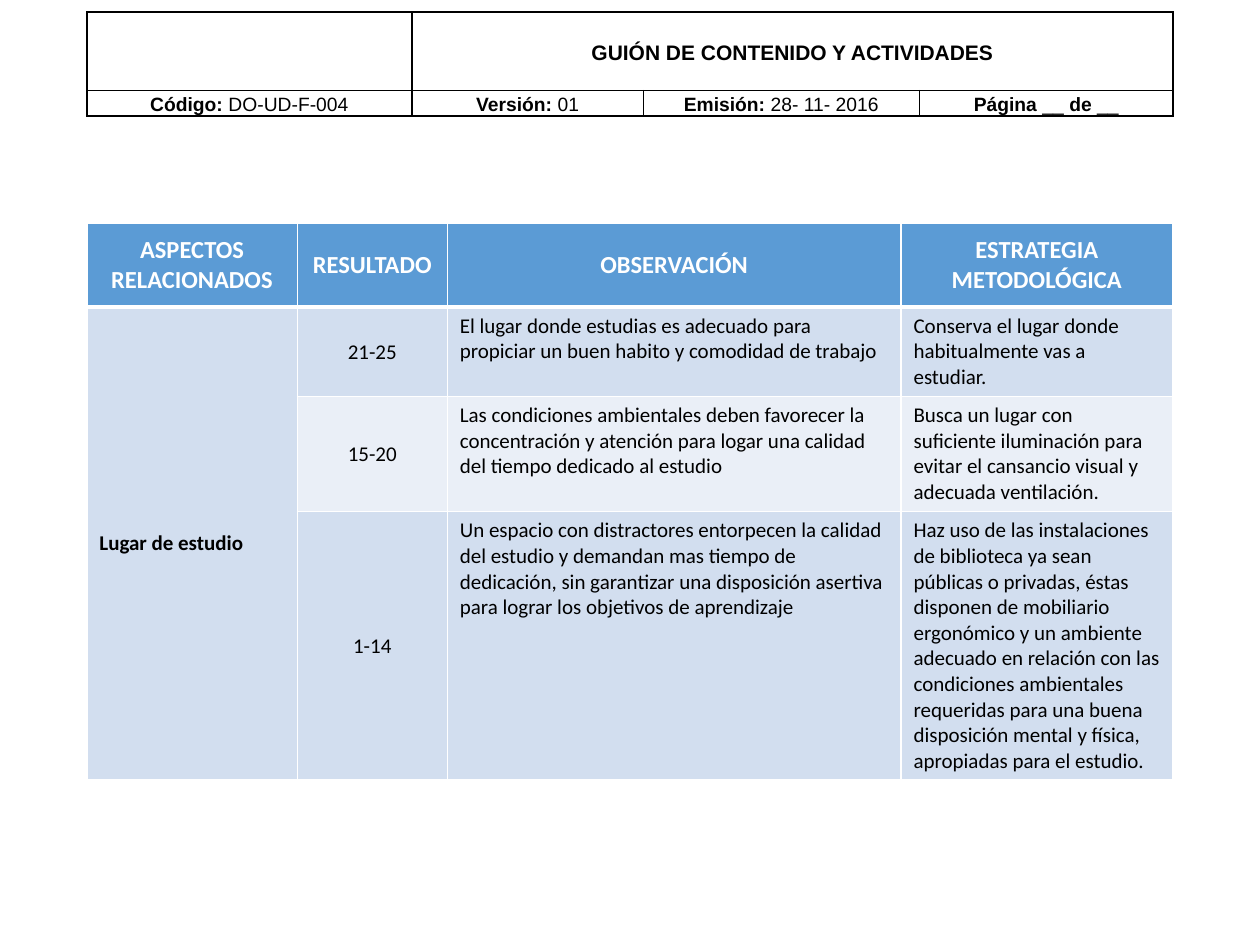
from lxml import etree
from pptx import Presentation
from pptx.dml.color import RGBColor
from pptx.enum.text import MSO_ANCHOR, PP_ALIGN
from pptx.oxml.ns import qn
from pptx.util import Pt

CENTER, LEFT = PP_ALIGN.CENTER, PP_ALIGN.LEFT
MIDDLE, TOP = MSO_ANCHOR.MIDDLE, MSO_ANCHOR.TOP
BLACK, WHITE = "000000", "FFFFFF"
HEADER_FILL, BAND_FILLS = "5B9BD5", ("D2DEEF", "EAEFF7")

TITLE = [("GUIÓN DE CONTENIDO Y ACTIVIDADES", True)]
DOCUMENT_DATA = [
    [("Código: ", True), ("DO-UD-F-004", False)],
    [("Versión:", True), (" 01", False)],
    [("Emisión:", True), (" 28- 11- 2016", False)],
    [("Página ", True), ("__ ", False), ("de ", True), ("__", False)],
]
HEADINGS = ["ASPECTOS RELACIONADOS", "RESULTADO", "OBSERVACIÓN", "ESTRATEGIA METODOLÓGICA"]
ASPECT = "Lugar de estudio"
RESULTS = [
    ("21-25",
     "El lugar donde estudias es adecuado para propiciar un buen habito y comodidad de trabajo",
     "Conserva el lugar donde habitualmente vas a estudiar."),
    ("15-20",
     "Las condiciones ambientales deben favorecer la concentración y atención para logar una "
     "calidad del tiempo dedicado al estudio",
     "Busca un lugar con suficiente iluminación para evitar el cansancio visual y adecuada "
     "ventilación."),
    ("1-14",
     "Un espacio con distractores entorpecen la calidad del estudio y demandan mas tiempo de "
     "dedicación, sin garantizar una disposición asertiva para lograr los objetivos de aprendizaje",
     "Haz uso de las instalaciones de biblioteca ya sean públicas o privadas, éstas disponen de "
     "mobiliario ergonómico y un ambiente adecuado en relación con las condiciones ambientales "
     "requeridas para una buena disposición mental y física, apropiadas para el estudio."),
]

TABLE_LEFT = 49.6
FORM_TOP, FORM_WIDTHS, FORM_HEIGHTS = 6.8, (185.8, 132.2, 157.8, 145), (45, 14.4)
RESULTS_TOP, RESULTS_WIDTHS, RESULTS_HEIGHTS = 127.5, (120.3, 85.7, 259.3, 155.3), (48, 51, 65.5, 153)


def rgb(value):
    return RGBColor.from_string(value)


def add_grid(slide, top, widths, heights):
    table = slide.shapes.add_table(
        len(heights), len(widths), Pt(TABLE_LEFT), Pt(top), Pt(sum(widths)), Pt(sum(heights))).table
    table.first_row = table.horz_banding = False
    for column, width in zip(table.columns, widths):
        column.width = Pt(width)
    for row, height in zip(table.rows, heights):
        row.height = Pt(height)
    return table


def paint(cell, color, fill=None, top=1, bottom=1):
    properties = cell._tc.get_or_add_tcPr()
    for side, weight in (("L", 1), ("R", 1), ("T", top), ("B", bottom)):
        line = etree.SubElement(properties, qn(f"a:ln{side}"), w=str(Pt(weight)))
        solid = etree.SubElement(line, qn("a:solidFill"))
        etree.SubElement(solid, qn("a:srgbClr"), val=color)
    if fill:
        cell.fill.solid()
        cell.fill.fore_color.rgb = rgb(fill)
    else:
        cell.fill.background()


def write(cell, runs, font, size, color=BLACK, align=CENTER, anchor=MIDDLE):
    cell.vertical_anchor = anchor
    paragraph = cell.text_frame.paragraphs[0]
    paragraph.alignment = align
    for text, bold in runs:
        run = paragraph.add_run()
        run.text = text
        run.font.name, run.font.size, run.font.bold = font, Pt(size), bold
        run.font.color.rgb = rgb(color)
    return paragraph


def write_form(cell, runs, size):
    cell.margin_left = cell.margin_right = Pt(3.6)
    cell.margin_top = cell.margin_bottom = 0
    write(cell, runs, "Arial", size).line_spacing = 1.15


def add_form(slide):
    form = add_grid(slide, FORM_TOP, FORM_WIDTHS, FORM_HEIGHTS)
    for cell in form.iter_cells():
        paint(cell, BLACK)
    form.cell(0, 1).merge(form.cell(0, 3))
    write_form(form.cell(0, 1), TITLE, 12)
    for column, runs in enumerate(DOCUMENT_DATA):
        write_form(form.cell(1, column), runs, 11)


def add_results(slide):
    results = add_grid(slide, RESULTS_TOP, RESULTS_WIDTHS, RESULTS_HEIGHTS)
    for column, heading in enumerate(HEADINGS):
        cell = results.cell(0, column)
        paint(cell, WHITE, HEADER_FILL, bottom=3)
        write(cell, [(heading, True)], "Calibri", 14, WHITE)
    for row, (score, observation, strategy) in enumerate(RESULTS, 1):
        top = 3 if row == 1 else 1
        paint(results.cell(row, 0), WHITE, BAND_FILLS[0], top)
        for column, text in enumerate((score, observation, strategy), 1):
            cell = results.cell(row, column)
            paint(cell, WHITE, BAND_FILLS[(row - 1) % 2], top)
            align, anchor = (CENTER, MIDDLE) if column == 1 else (LEFT, TOP)
            write(cell, [(text, False)], "Calibri", 12, align=align, anchor=anchor)
    results.cell(1, 0).merge(results.cell(len(RESULTS), 0))
    write(results.cell(1, 0), [(ASPECT, True)], "Calibri", 12, align=LEFT)


def main():
    presentation = Presentation()
    presentation.slide_width, presentation.slide_height = Pt(720), Pt(540)
    slide = presentation.slides.add_slide(presentation.slide_layouts[6])
    add_form(slide)
    add_results(slide)
    presentation.save("out.pptx")


if __name__ == "__main__":
    main()
